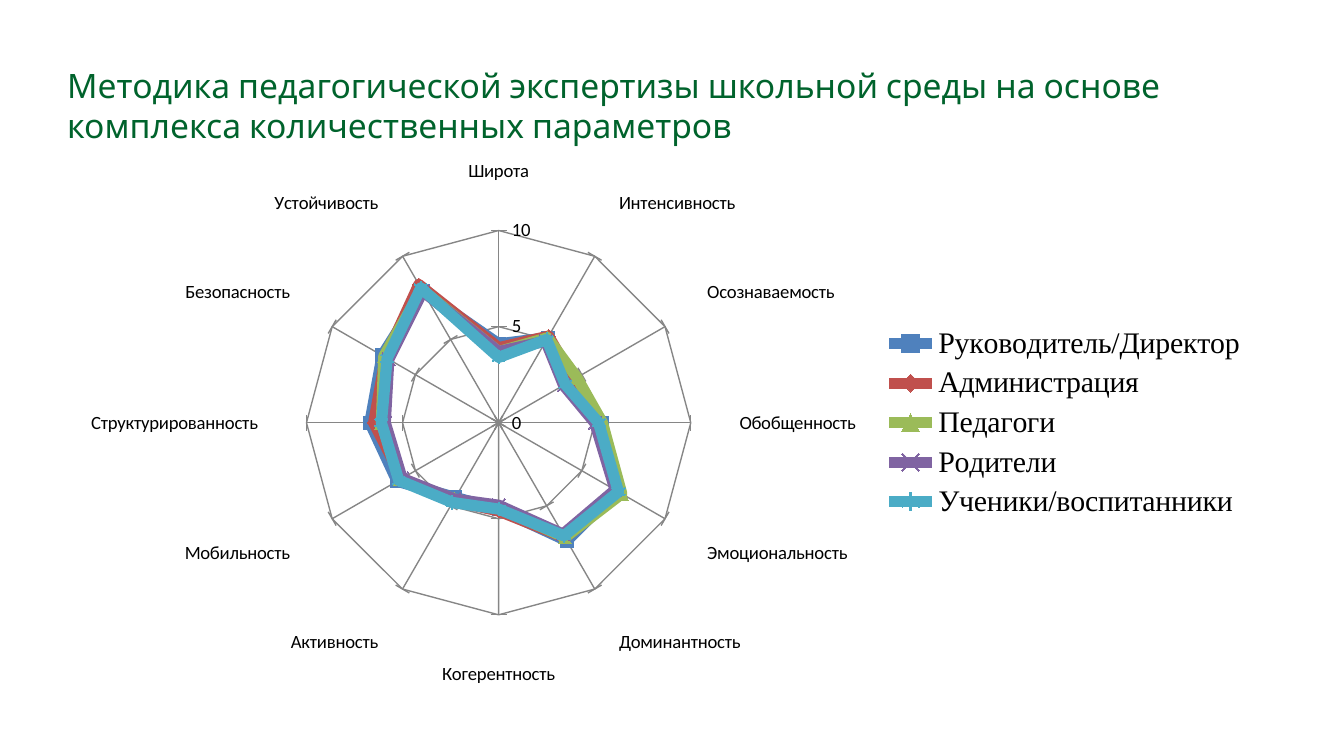
from pptx import Presentation
from pptx.chart.data import CategoryChartData
from pptx.dml.color import RGBColor
from pptx.enum.chart import XL_CHART_TYPE, XL_LEGEND_POSITION, XL_MARKER_STYLE, XL_TICK_MARK
from pptx.enum.text import MSO_ANCHOR, PP_ALIGN
from pptx.util import Cm, Pt

RADAR = XL_CHART_TYPE.RADAR_MARKERS
RIGHT = XL_LEGEND_POSITION.RIGHT
CROSS, OUTSIDE = XL_TICK_MARK.CROSS, XL_TICK_MARK.OUTSIDE
SQUARE, DIAMOND, TRIANGLE = XL_MARKER_STYLE.SQUARE, XL_MARKER_STYLE.DIAMOND, XL_MARKER_STYLE.TRIANGLE
X_MARK, STAR = XL_MARKER_STYLE.X, XL_MARKER_STYLE.STAR
TOP, LEFT = MSO_ANCHOR.TOP, PP_ALIGN.LEFT

TITLE = ("Методика педагогической экспертизы школьной среды "
         "на основе комплекса количественных параметров")
PARAMETERS = ["Широта", "Интенсивность", "Осознаваемость", "Обобщенность",
              "Эмоциональность", "Доминантность", "Когерентность", "Активность",
              "Мобильность", "Структурированность", "Безопасность", "Устойчивость"]
GROUPS = [
    ("Руководитель/Директор", "4F81BD", SQUARE,
     [4.1, 5.1, 4.4, 5.4, 7.1, 7.1, 4.5, 4.5, 6.1, 6.7, 7, 7.9]),
    ("Администрация", "C0504D", DIAMOND,
     [3.9, 5.2, 4.5, 5.3, 7.3, 6.9, 4.6, 4.7, 5.8, 6.5, 6.8, 8.3]),
    ("Педагоги", "9BBB59", TRIANGLE,
     [3.7, 5.1, 4.7, 5.4, 7.4, 6.9, 4.4, 4.6, 5.9, 6.1, 6.9, 8]),
    ("Родители", "8064A2", X_MARK,
     [3.7, 4.9, 3.9, 5, 7, 6.7, 4.3, 4.6, 5.8, 5.9, 6.6, 7.9]),
    ("Ученики/воспитанники", "4BACC6", STAR,
     [3.4, 5, 4, 5.2, 7.2, 6.8, 4.5, 4.8, 6, 6.1, 6.7, 8.1]),
]


def rgb(value):
    """Return the colour for a hex string."""
    return RGBColor.from_string(value)


def style_font(font, name, size, color):
    """Set the face, size and colour of a font."""
    font.name, font.size = name, Pt(size)
    font.color.rgb = rgb(color)


def style_line(line, color, width):
    """Set the colour and width of a line."""
    line.color.rgb = rgb(color)
    line.width = Pt(width)


def set_title(slide, text):
    """Place and format the slide title."""
    sp = slide.shapes.title
    sp.left, sp.top, sp.width, sp.height = Cm(1.27), Cm(1.22), Cm(22.66), Cm(1.55)
    tf = sp.text_frame
    tf.text = text
    tf.word_wrap = True
    tf.vertical_anchor = TOP
    tf.margin_left = tf.margin_top = tf.margin_right = tf.margin_bottom = 0
    p = tf.paragraphs[0]
    p.alignment = LEFT
    style_font(p.runs[0].font, "Karla", 18, "00632C")


def style_axes(chart):
    """Format the spokes and rings of the radar."""
    chart.category_axis.major_tick_mark = OUTSIDE
    axis = chart.value_axis
    axis.major_tick_mark = CROSS
    axis.minimum_scale, axis.maximum_scale, axis.major_unit = 0, 10, 5
    for ax in (chart.category_axis, axis):
        ax.has_major_gridlines = True
        style_line(ax.major_gridlines.format.line, "868686", 0.75)
        style_line(ax.format.line, "868686", 0.75)


def style_series(series, color, marker):
    """Draw a series as a thick line with matching markers."""
    series.smooth = False
    style_line(series.format.line, color, 6)
    series.marker.style = marker
    series.marker.size = 7
    series.marker.format.fill.solid()
    series.marker.format.fill.fore_color.rgb = rgb(color)
    style_line(series.marker.format.line, color, 0.75)


def add_radar(slide):
    """Add the radar chart of school environment parameters."""
    data = CategoryChartData()
    data.categories = PARAMETERS
    for name, _, _, values in GROUPS:
        data.add_series(name, values)
    chart = slide.shapes.add_chart(
        RADAR, Cm(1.27), Cm(0.79), Cm(22.56), Cm(14.4), data).chart
    chart.has_title = False
    style_font(chart.font, "Calibri", 10, "000000")
    style_axes(chart)
    plot = chart.plots[0]
    plot.vary_by_categories = False
    for series, (_, color, marker, _) in zip(plot.series, GROUPS):
        style_series(series, color, marker)
    chart.has_legend = True
    chart.legend.position = RIGHT
    chart.legend.include_in_layout = False
    style_font(chart.legend.font, "Times New Roman", 16, "000000")


def main():
    """Build and save the slide."""
    prs = Presentation()
    prs.slide_width, prs.slide_height = Cm(25.4), Cm(14.29)
    slide = prs.slides.add_slide(prs.slide_layouts[5])
    set_title(slide, TITLE)
    add_radar(slide)
    prs.save("out.pptx")


if __name__ == "__main__":
    main()
